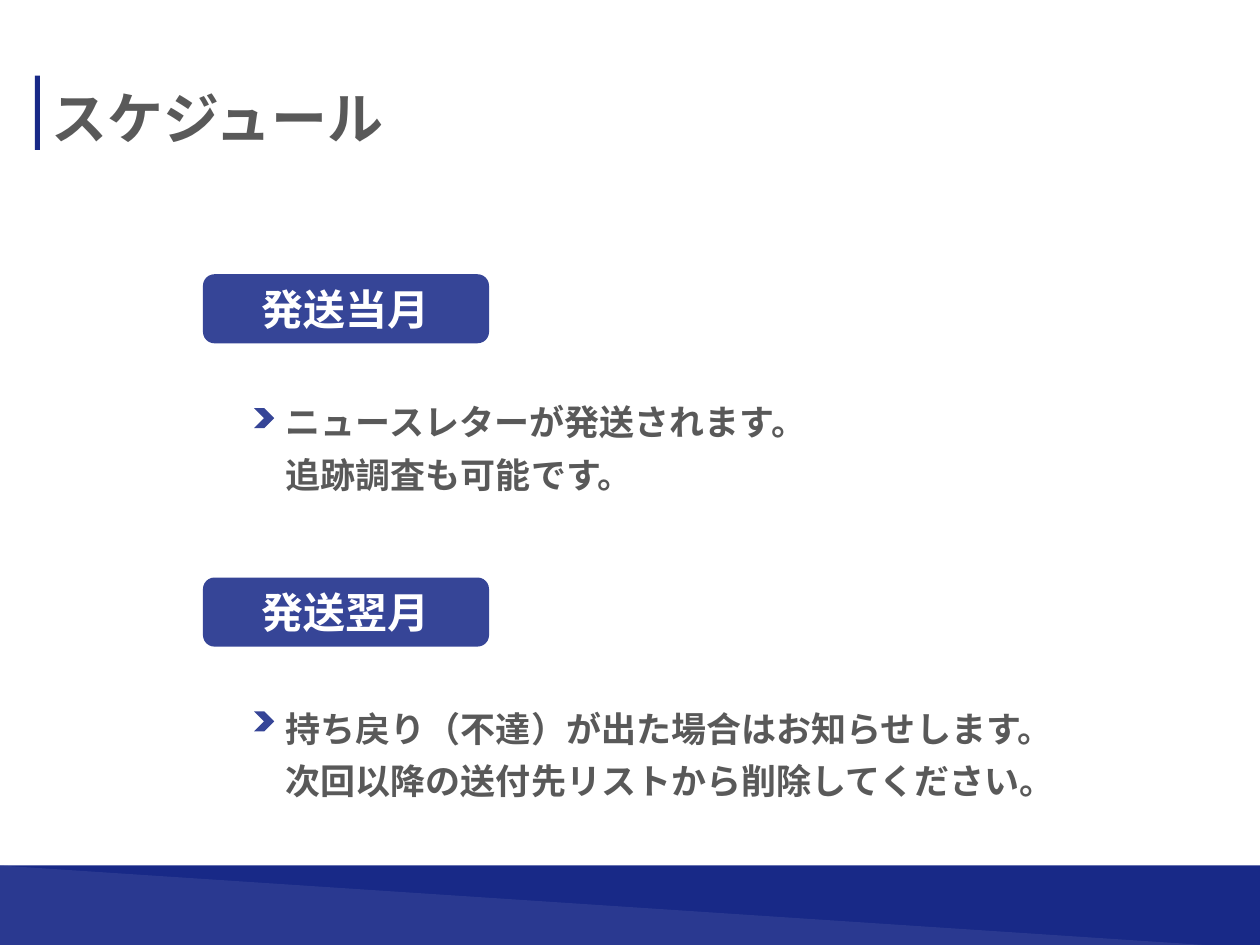
from lxml import etree
from pptx import Presentation
from pptx.dml.color import RGBColor
from pptx.enum.shapes import MSO_SHAPE
from pptx.enum.text import MSO_ANCHOR, PP_ALIGN
from pptx.oxml.ns import qn
from pptx.util import Pt

RECT = MSO_SHAPE.RECTANGLE
ROUND = MSO_SHAPE.ROUNDED_RECTANGLE
WEDGE = MSO_SHAPE.ISOSCELES_TRIANGLE
ARROW = MSO_SHAPE.CHEVRON
LEFT, CENTER = PP_ALIGN.LEFT, PP_ALIGN.CENTER
MIDDLE = MSO_ANCHOR.MIDDLE

FONT = "Noto Sans CJK JP"
COLORS = {"navy": "182987", "blue": "364597", "gray": "595959", "white": "FFFFFF"}


class Deck:
    def __init__(self, wide, high):
        self.prs = Presentation()
        self.prs.slide_width, self.prs.slide_height = Pt(wide), Pt(high)
        self.slide = self.prs.slides.add_slide(self.prs.slide_layouts[6])

    def color(self, name):
        return RGBColor.from_string(COLORS[name])

    def shape(self, kind, box, fill, alpha=None):
        """Add a borderless shape; alpha is its opacity in percent."""
        item = self.slide.shapes.add_shape(kind, *map(Pt, box))
        item.shadow.inherit = False
        item.line.fill.background()
        item.fill.solid()
        item.fill.fore_color.rgb = self.color(fill)
        if alpha:
            tint = item.element.spPr.find(".//" + qn("a:srgbClr"))
            etree.SubElement(tint, qn("a:alpha"), val=str(alpha * 1000))
        return item

    def put(self, frame, lines, size, color, align=LEFT, pitch=None):
        """Fill a frame, one paragraph a line; pitch is the line spacing."""
        frame.word_wrap = True
        for i, line in enumerate(lines):
            para = frame.add_paragraph() if i else frame.paragraphs[0]
            para.alignment = align
            if pitch:
                para.line_spacing = Pt(pitch)
            run = para.add_run()
            run.text = line
            font = run.font
            font.size, font.bold, font.name = Pt(size), True, FONT
            font.color.rgb = self.color(color)
            etree.SubElement(run._r.get_or_add_rPr(), qn("a:ea"), typeface=FONT)

    def text(self, box, lines, size, pitch=None):
        item = self.slide.shapes.add_textbox(*map(Pt, box))
        self.put(item.text_frame, lines, size, "gray", pitch=pitch)

    def label(self, box, line):
        item = self.shape(ROUND, box, "blue")
        item.text_frame.vertical_anchor = MIDDLE
        self.put(item.text_frame, [line], 24, "white", CENTER)

    def step(self, top, name, lines, gap):
        """Add a label with a marked note whose text starts gap below its top."""
        self.label((116, top, 163.5, 39.5), name)
        self.text((156.2, top + gap, 462, 66.2), lines, 20, pitch=30)
        self.shape(ARROW, (145.2, top + 76.5, 11.5, 11.5), "blue")


def main():
    deck = Deck(720, 540)
    foot = (0, 494.6, 720, 47.5)
    deck.shape(RECT, (20, 43.2, 2.9, 42.5), "navy")
    deck.shape(RECT, foot, "navy")
    deck.shape(WEDGE, foot, "blue", 60).adjustments[0] = 0
    deck.text((22.3, 43.9, 417, 46), ["スケジュール"], 32)
    deck.step(156.7, "発送当月",
              ["ニュースレターが発送されます。", "追跡調査も可能です。"], 62.9)
    deck.step(330, "発送翌月",
              ["持ち戻り（不達）が出た場合はお知らせします。",
               "次回以降の送付先リストから削除してください。"], 64.6)
    deck.prs.save("out.pptx")


if __name__ == "__main__":
    main()
